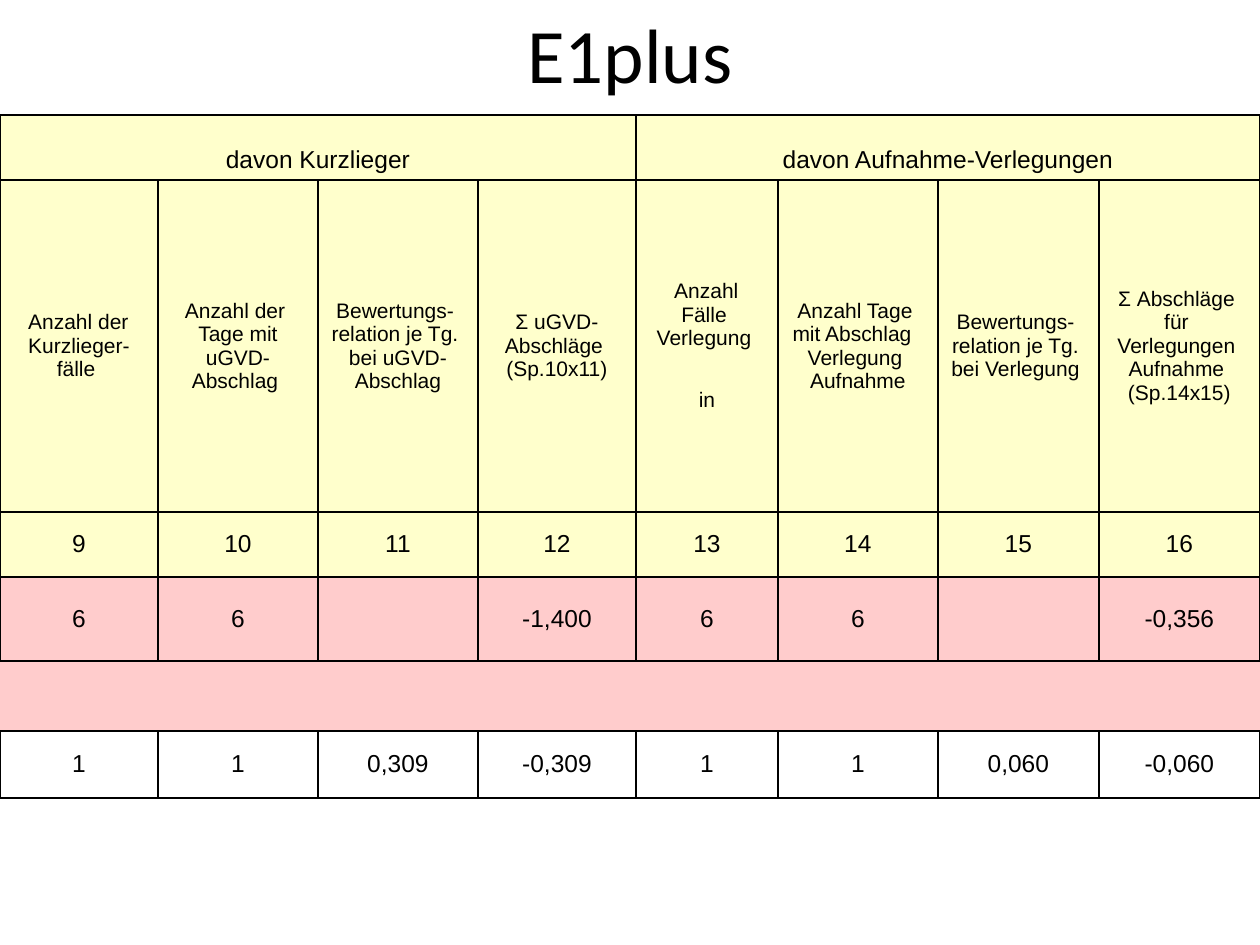
from pptx import Presentation
from pptx import util as u
from pptx.dml.color import RGBColor
from pptx.enum import text
from pptx.oxml.ns import qn
from lxml import etree

PX = 914400 / 126
BLACK = RGBColor(0x00, 0x00, 0x00)
WHITE = RGBColor(0xFF, 0xFF, 0xFF)
YELLOW = RGBColor(0xFF, 0xFF, 0xCC)
PINK = RGBColor(0xFF, 0xCC, 0xCC)

COLS = [158, 160, 160, 158, 142, 160, 161, 161]
ROWS = [65, 332, 65, 84, 70, 67]
FILLS = [YELLOW, YELLOW, YELLOW, PINK, PINK, WHITE]
GROUP_ROW, HEAD_ROW, GAP_ROW = 0, 1, 4
SPAN = 4
HEADINGS = [
    [" Anzahl der ", "Kurzlieger-", "fälle "],
    ["Anzahl der ", "Tage mit", "uGVD-", "Abschlag "],
    ["Bewertungs- ", "relation je Tg. ", "bei uGVD-", "Abschlag"],
    ["Σ uGVD-", "Abschläge ", "(Sp.10x11)"],
    [" Anzahl ", "Fälle ", "Verlegung \v", "in"],
    ["Anzahl Tage ", "mit Abschlag  ", "Verlegung ", "Aufnahme"],
    ["Bewertungs- ", "relation je Tg. ", "bei Verlegung "],
    ["Σ Abschläge ", "für ", "Verlegungen ", "Aufnahme ", "(Sp.14x15)"],
]
CONTENT = [
    ["davon Kurzlieger", "", "", "", "davon Aufnahme-Verlegungen", "", "", ""],
    ["\n".join(lines) for lines in HEADINGS],
    [str(n) for n in range(9, 17)],
    ["6", "6", "", "-1,400", "6", "6", "", "-0,356"],
    [""] * len(COLS),
    ["1", "1", "0,309", "-0,309", "1", "1", "0,060", "-0,060"],
]


def px(n):
    """Turn pixels into EMU."""
    return u.Emu(round(n * PX))


def write(tf, content, size, font, hanging=0):
    """Fill a text frame with centred paragraphs, one per line."""
    tf.text = content
    for p in tf.paragraphs:
        p.alignment = text.PP_ALIGN.CENTER
        if hanging:
            pPr = p._p.get_or_add_pPr()
            pPr.set("marL", str(px(hanging)))
            pPr.set("indent", str(-px(hanging)))
        for r in p.runs:
            r.font.size = u.Pt(size)
            r.font.name = font
            r.font.color.rgb = BLACK


def border(cell, visible):
    """Draw the sides of a cell named in visible and clear the others."""
    tcPr = cell._tc.get_or_add_tcPr()
    for side in "LRTB":
        ln = etree.SubElement(tcPr, qn(f"a:ln{side}"), w=str(u.Pt(1)))
        if side in visible:
            fill = etree.SubElement(ln, qn("a:solidFill"))
            etree.SubElement(fill, qn("a:srgbClr"), val=str(BLACK))
        else:
            etree.SubElement(ln, qn("a:noFill"))


def add_title(s, x, y, w, h):
    """Place the slide title in its box."""
    sp = s.shapes.title
    sp.left, sp.top, sp.width, sp.height = map(px, (x, y, w, h))
    sp.text_frame.vertical_anchor = text.MSO_ANCHOR.MIDDLE
    write(sp.text_frame, "E1plus", 44, "Calibri")


def add_case_table(s, x, y):
    """Place the table of short stays and transfers at a corner."""
    box = map(px, (x, y, sum(COLS), sum(ROWS)))
    table = s.shapes.add_table(len(ROWS), len(COLS), *box).table
    table.first_row = table.horz_banding = False
    for col, w in zip(table.columns, COLS):
        col.width = px(w)
    for i, (row, h) in enumerate(zip(table.rows, ROWS)):
        row.height = px(h)
        for cell, content in zip(row.cells, CONTENT[i]):
            border(cell, "TB" if i == GAP_ROW else "LRTB")
            cell.fill.solid()
            cell.fill.fore_color.rgb = FILLS[i]
            anchor = text.MSO_ANCHOR
            cell.vertical_anchor = anchor.BOTTOM if i == GROUP_ROW else anchor.MIDDLE
            if content:
                write(cell.text_frame, content, 12 if i == HEAD_ROW else 14, "Arial", 84)
    for c in range(0, len(COLS), SPAN):
        table.cell(GROUP_ROW, c).merge(table.cell(GROUP_ROW, c + SPAN - 1))


def main():
    """Build the slide and save it."""
    prs = Presentation()
    prs.slide_width, prs.slide_height = px(1260), px(945)
    s = prs.slides.add_slide(prs.slide_layouts[5])
    add_title(s, 63, 0, 1134, 106)
    add_case_table(s, 0, 115)
    prs.save("out.pptx")


if __name__ == "__main__":
    main()
